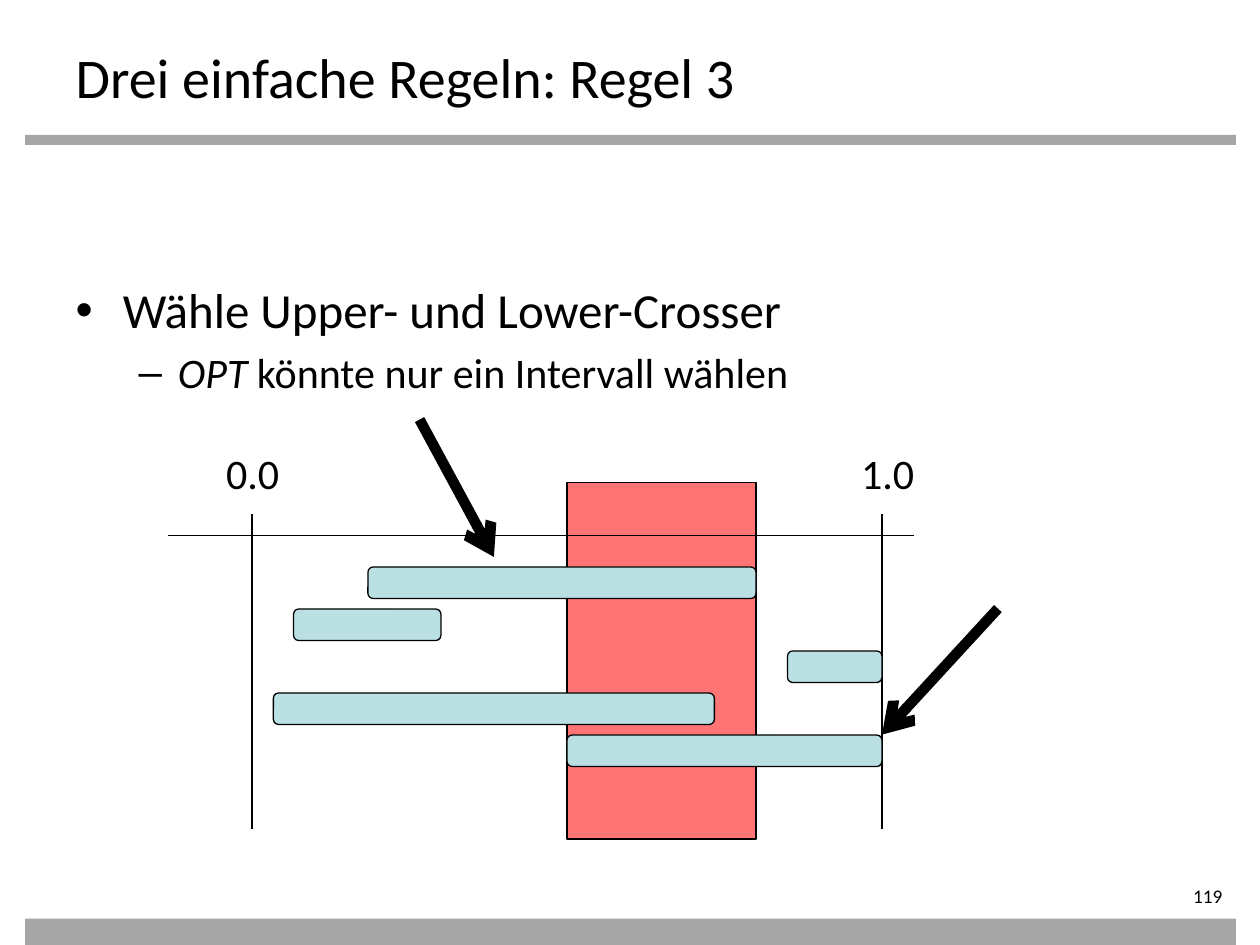
from lxml.etree import SubElement
from pptx import Presentation
from pptx.dml.color import RGBColor
from pptx.enum.shapes import MSO_CONNECTOR, MSO_SHAPE
from pptx.enum.text import MSO_ANCHOR, PP_ALIGN
from pptx.oxml.ns import qn
from pptx.util import Inches, Pt


def color(code):
    return RGBColor.from_string(code)


class Deck:
    """Holds the style and the current slide, and draws each kind of element."""

    font = "Calibri"
    ink = "000000"
    gray = "A6A6A6"
    teal = "BBE0E3"
    red = "FF0000"

    def __init__(self):
        self.file = Presentation()
        self.file.slide_width = Inches(10)
        self.file.slide_height = Inches(7.5)
        self.slide = self.file.slides.add_slide(self.file.slide_layouts[1])

    def place(self, shape, left, top, width, height):
        shape.left, shape.top = Inches(left), Inches(top)
        shape.width, shape.height = Inches(width), Inches(height)

    def run(self, para, text, size, italic=False):
        run = para.add_run()
        run.text = text
        run.font.name = self.font
        run.font.size = Pt(size)
        run.font.italic = italic
        run.font.color.rgb = color(self.ink)

    def title(self, text):
        shape = self.slide.shapes.title
        self.place(shape, 0.5, 0.29, 9, 1.5)
        shape.text_frame.vertical_anchor = MSO_ANCHOR.TOP
        para = shape.text_frame.paragraphs[0]
        para.alignment = PP_ALIGN.LEFT
        self.run(para, text, 32)

    def body(self, items):
        shape = self.slide.placeholders[1]
        self.place(shape, 0.5, 2.17, 7.5, 1.17)
        frame = shape.text_frame
        for i, (level, size, runs) in enumerate(items):
            para = frame.add_paragraph() if i else frame.paragraphs[0]
            para.level = level
            if i == 0:
                para.space_before = Pt(0)
            for text, italic in runs:
                self.run(para, text, size, italic)

    def label(self, text, left, top, width, height, size=24):
        box = self.slide.shapes.add_textbox(
            Inches(left), Inches(top), Inches(width), Inches(height))
        box.text_frame.word_wrap = True
        para = box.text_frame.paragraphs[0]
        para.alignment = PP_ALIGN.CENTER
        self.run(para, text, size)

    def number(self, text):
        box = self.slide.shapes.add_textbox(
            Inches(8.7), Inches(7), Inches(1.1), Inches(0.22))
        frame = box.text_frame
        frame.word_wrap = True
        frame.vertical_anchor = MSO_ANCHOR.MIDDLE
        frame.margin_left = frame.margin_top = frame.margin_bottom = 0
        para = frame.paragraphs[0]
        para.alignment = PP_ALIGN.RIGHT
        self.run(para, text, 11)

    def block(self, left, top, width, height, fill,
              kind=MSO_SHAPE.RECTANGLE, edge=True, alpha=None):
        shape = self.slide.shapes.add_shape(
            kind, Inches(left), Inches(top), Inches(width), Inches(height))
        shape.shadow.inherit = False
        shape.fill.solid()
        shape.fill.fore_color.rgb = color(fill)
        if alpha:
            tint = shape._element.spPr.find(qn("a:solidFill"))[0]
            SubElement(tint, qn("a:alpha")).set("val", str(alpha * 1000))
        if edge:
            shape.line.color.rgb = color(self.ink)
            shape.line.width = Pt(0.75)
        else:
            shape.line.fill.background()

    def line(self, start, end, width=0.75, arrow=False):
        link = self.slide.shapes.add_connector(
            MSO_CONNECTOR.STRAIGHT, *map(Inches, start + end))
        link.line.color.rgb = color(self.ink)
        link.line.width = Pt(width)
        props = link._element.spPr
        if arrow:
            SubElement(props.find(qn("a:ln")),
                       qn("a:tailEnd")).set("type", "arrow")
        SubElement(props, qn("a:effectLst"))

    def save(self):
        self.file.save("out.pptx")


def main():
    deck = Deck()
    for top, height in ((1.07, 0.08), (7.29, 0.21)):
        deck.block(0.2, top, 9.61, height, deck.gray, edge=False)
    deck.number("119")
    deck.title("Drei einfache Regeln: Regel 3")
    deck.body([
        (0, 28, [("Wähle Upper- und Lower-Crosser", False)]),
        (1, 24, [("OPT ", True), ("könnte nur ein Intervall wählen", False)]),
    ])

    deck.block(4.5, 3.83, 1.5, 2.83, deck.red, alpha=54)
    for x in (2, 7):
        deck.line((x, 4.08), (x, 6.58))
    deck.line((1.33, 4.25), (7.25, 4.25))
    deck.label("0.0", 1.67, 3.5, 0.67, 0.5)
    deck.label("1.0", 6.67, 3.5, 0.75, 0.5)

    spans = [(2.92, 6), (2.33, 3.5), (6.25, 7), (2.17, 5.67), (4.5, 7)]
    for row, (left, right) in enumerate(spans):
        deck.block(left, 4.5 + row / 3, right - left, 0.25, deck.teal,
                   MSO_SHAPE.ROUNDED_RECTANGLE)
    for start, end in (((3.33, 3.33), (3.92, 4.42)),
                       ((7.92, 4.83), (7, 5.83))):
        deck.line(start, end, 6, arrow=True)
    deck.save()


if __name__ == "__main__":
    main()
